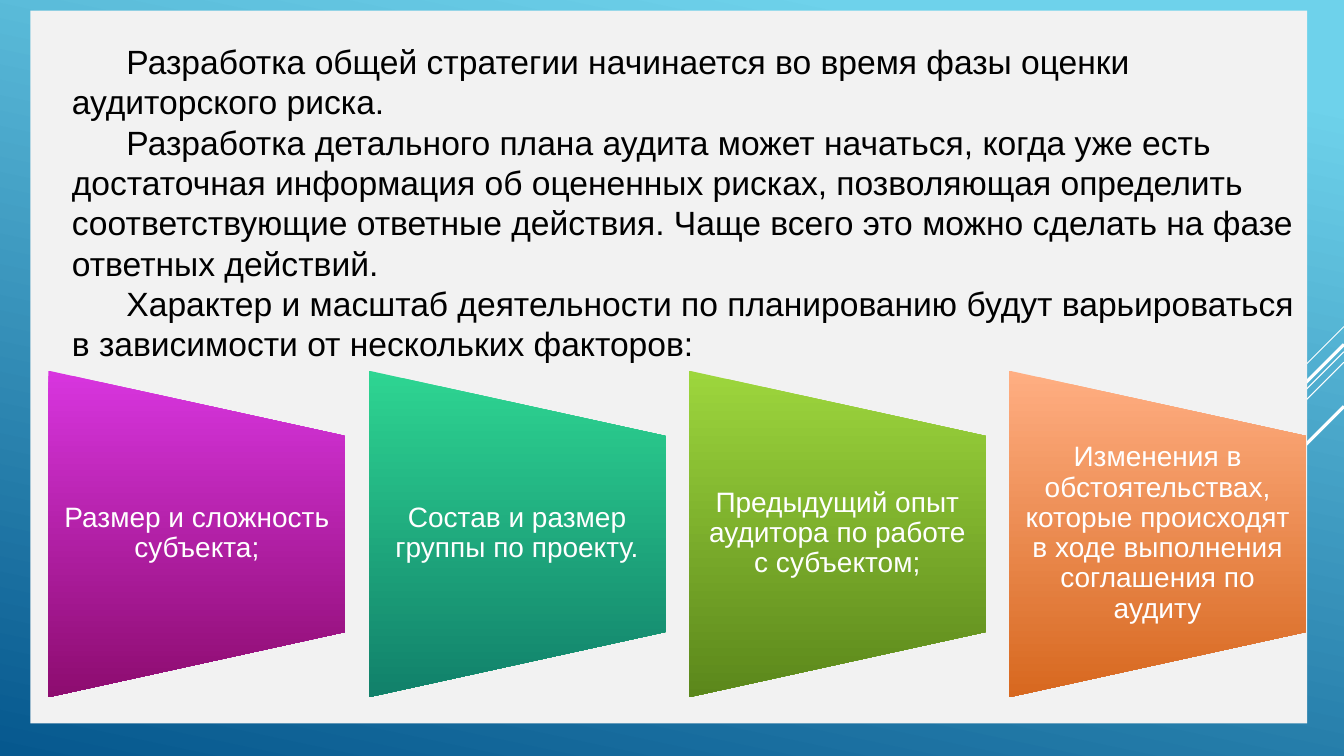
from pptx import Presentation, util as u
from pptx.dml.color import RGBColor
from pptx.enum import shapes, text
from pptx.oxml.ns import qn

PX = 9525
WHITE = RGBColor(0xFF, 0xFF, 0xFF)
BLACK = RGBColor(0x00, 0x00, 0x00)
PANEL = RGBColor(0xF2, 0xF2, 0xF2)
SKY = RGBColor(0x6E, 0xD2, 0xEB)
OCEAN = RGBColor(0x06, 0x58, 0x8E)

PARAGRAPHS = [
    "Разработка общей стратегии начинается во время фазы оценки аудиторского риска.",
    "Разработка детального плана аудита может начаться, когда уже есть достаточная информация об оцененных рисках, позволяющая определить соответствующие ответные действия. Чаще всего это можно сделать на фазе ответных действий.",
    "Характер и масштаб деятельности по планированию будут варьироваться в зависимости от нескольких факторов:",
]
FACTORS = [
    ("Размер и сложность субъекта;", RGBColor(0xD8, 0x35, 0xDF), RGBColor(0x8D, 0x0C, 0x6F)),
    ("Состав и размер группы по проекту.", RGBColor(0x2E, 0xD5, 0x92), RGBColor(0x11, 0x80, 0x6A)),
    ("Предыдущий опыт аудитора по работе с субъектом;", RGBColor(0x9D, 0xD6, 0x3D), RGBColor(0x5B, 0x87, 0x1B)),
    ("Изменения в обстоятельствах, которые происходят в ходе выполнения соглашения по аудиту", RGBColor(0xFF, 0xAE, 0x82), RGBColor(0xD7, 0x68, 0x1F)),
]
RAYS = [(311, 96, 0.75), (335, 313, 0.75), (345, 199, 0.75), (328, 183, 2.25), (387, 133, 2.25)]


def set_gradient(fill, start, end, angle, first_stop=0):
    fill.gradient()
    fill.gradient_angle = angle
    first, last = fill.gradient_stops
    first.color.rgb, first.position = start, first_stop
    last.color.rgb, last.position = end, 1


def add_text(para, words, size, color):
    span = para.add_run()
    span.text = words
    span.font.name = "Arial"
    span.font.size = u.Pt(size)
    span.font.color.rgb = color


deck = Presentation()
deck.slide_width, deck.slide_height = 1280 * PX, 720 * PX
page = deck.slides.add_slide(deck.slide_layouts[6])
set_gradient(page.background.fill, SKY, OCEAN, 258, 0.1)

for top, reach, weight in RAYS:
    ray = page.shapes.add_connector(
        shapes.MSO_CONNECTOR.STRAIGHT,
        1280 * PX, top * PX, (1280 - reach) * PX, (top + reach) * PX)
    ray.line.color.rgb = WHITE
    ray.line.width = u.Pt(weight)
    ray._element.spPr.append(ray._element.spPr.makeelement(qn("a:effectLst"), {}))

panel = page.shapes.add_shape(
    shapes.MSO_SHAPE.RECTANGLE, 29 * PX, 10 * PX, 1216 * PX, 679 * PX)
panel.shadow.inherit = False
panel.fill.solid()
panel.fill.fore_color.rgb = PANEL
panel.line.fill.background()
frame = panel.text_frame
frame.word_wrap = True
frame.vertical_anchor = text.MSO_ANCHOR.TOP
frame.margin_top = 29 * PX
for index, words in enumerate(PARAGRAPHS):
    para = frame.add_paragraph() if index else frame.paragraphs[0]
    para.alignment = text.PP_ALIGN.LEFT
    properties = para._p.get_or_add_pPr()
    properties.set("marL", str(30 * PX))
    properties.set("indent", str(52 * PX))
    add_text(para, words, 24, BLACK)

for index, (words, light, dark) in enumerate(FACTORS):
    left = 32 + 305 * index
    factor = page.shapes.add_shape(
        shapes.MSO_SHAPE.FLOWCHART_MANUAL_OPERATION,
        left * PX, 367 * PX, 311 * PX, 283 * PX)
    factor.rotation = 270
    factor.shadow.inherit = False
    factor.line.fill.background()
    set_gradient(factor.fill, light, dark, 270)
    factor._element.spPr.find(qn("a:gradFill")).set("rotWithShape", "0")

    box = page.shapes.add_textbox((left + 14) * PX, 415 * PX, 283 * PX, 186 * PX)
    frame = box.text_frame
    frame.word_wrap = True
    frame.vertical_anchor = text.MSO_ANCHOR.MIDDLE
    frame.margin_left = frame.margin_right = 13 * PX
    frame.margin_top = frame.margin_bottom = 0
    para = frame.paragraphs[0]
    para.alignment = text.PP_ALIGN.CENTER
    para.line_spacing = 0.9
    add_text(para, words, 20, WHITE)

deck.save("out.pptx")
